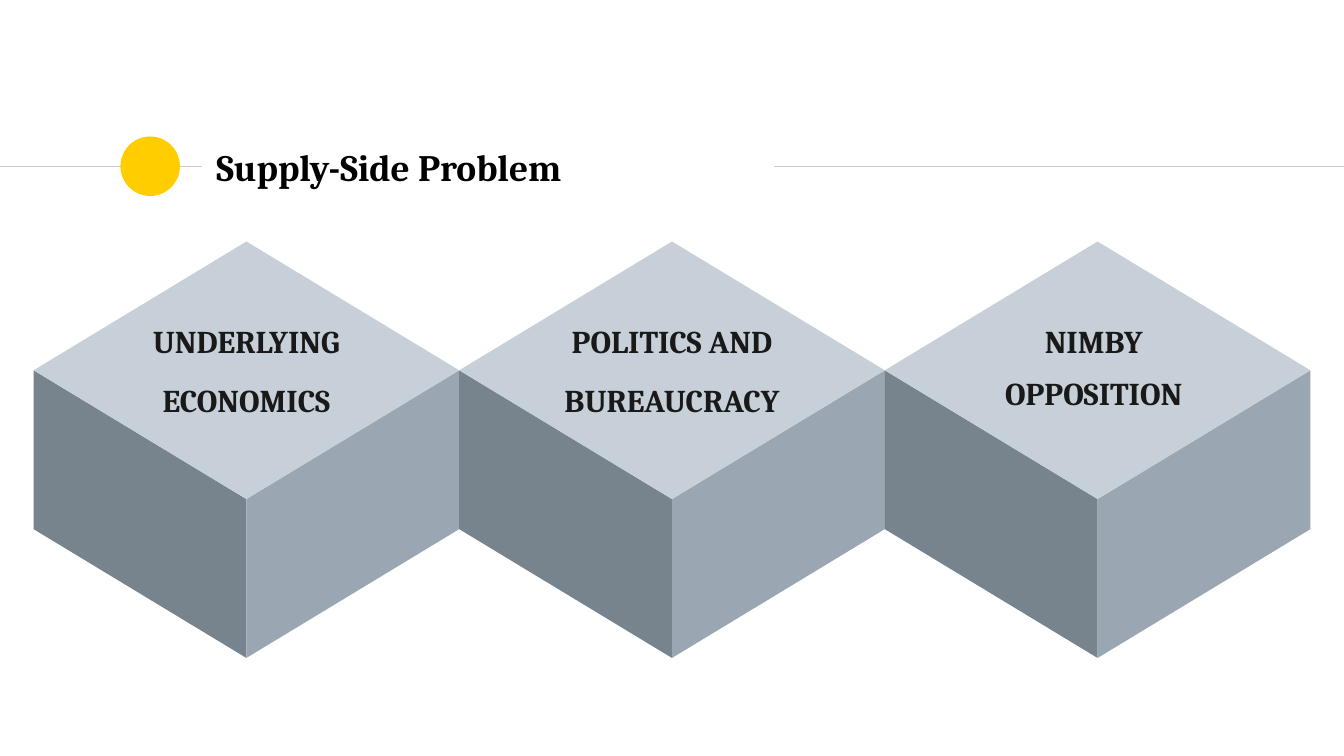
from lxml.etree import SubElement
from pptx import Presentation
from pptx.dml.color import RGBColor
from pptx.enum.shapes import MSO_CONNECTOR, MSO_SHAPE
from pptx.enum.text import MSO_ANCHOR, MSO_AUTO_SIZE, PP_ALIGN
from pptx.oxml.ns import qn
from pptx.util import Pt

PX = 9525  # EMU in one px
FONT = "Cambria"
COLORS = {
    "rule": "CCCCCC",
    "dot": "FFCD00",
    "left": "77838D",
    "right": "9AA7B2",
    "top": "C7D0D8",
    "label": "191919",
    "title": "000000",
}

CUBE_WIDTH, CUBE_HEIGHT, FACE_HEIGHT = 608, 595, 368
# Lines of text, line spacing, label size, shift from the cube's centre
CUBES = [
    (["UNDERLYING", "ECONOMICS"], 1.56, (428, 140), 0),
    (["POLITICS AND", "BUREAUCRACY"], 1.56, (428, 140), 0),
    (["NIMBY", "OPPOSITION"], 1.36, (417, 130), -6),
]


def color(name):
    return RGBColor.from_string(COLORS[name])


def paint(shape, name):
    shape.fill.solid()
    shape.fill.fore_color.rgb = color(name)
    shape.line.fill.background()
    shape.shadow.inherit = False


def set_frame(frame, inset):
    frame.word_wrap = True
    frame.auto_size = MSO_AUTO_SIZE.NONE
    frame.vertical_anchor = MSO_ANCHOR.MIDDLE
    frame.margin_left = frame.margin_right = inset * PX
    frame.margin_top = frame.margin_bottom = inset * PX


def add_span(para, text, size, name):
    span = para.add_run()
    span.text = text
    span.font.name = FONT
    span.font.size = Pt(size)
    span.font.bold = True
    span.font.color.rgb = color(name)


def add_rule(page, start, end, y):
    rule = page.shapes.add_connector(
        MSO_CONNECTOR.STRAIGHT, start * PX, y * PX, end * PX, y * PX)
    rule.line.color.rgb = color("rule")
    rule.line.width = Pt(0.75)
    SubElement(rule.element.spPr, qn("a:effectLst"))


def add_header(page, left, top, width, height):
    # Rules on both sides of the title, with a dot on the left one
    middle = top + height // 2
    add_rule(page, left, left + 289, middle)
    dot = page.shapes.add_shape(
        MSO_SHAPE.OVAL, (left + 172) * PX, (middle - 43) * PX, 85 * PX, 85 * PX)
    paint(dot, "dot")
    add_rule(page, left + 1106, left + width, middle)

    # Title
    title = page.shapes.title
    title.left, title.top = (left + 290) * PX, top * PX
    title.width, title.height = 814 * PX, height * PX
    set_frame(title.text_frame, 19)
    para = title.text_frame.paragraphs[0]
    para.alignment = PP_ALIGN.LEFT
    add_span(para, "Supply-Side Problem", 40, "title")


def add_cube(page, left, top, width, height, face_height):
    center, right = left + width // 2, left + width
    corner, front = top + face_height // 2, top + face_height
    depth = height - face_height
    faces = {
        "left": [(left, corner), (center, front),
                 (center, front + depth), (left, corner + depth)],
        "right": [(right, corner), (center, front),
                  (center, front + depth), (right, corner + depth)],
        "top": [(left, corner), (center, top), (right, corner), (center, front)],
    }
    cube = page.shapes.add_group_shape()
    for name, points in faces.items():
        outline = cube.shapes.build_freeform(*points[0], scale=PX)
        outline.add_line_segments(points[1:], close=True)
        paint(outline.convert_to_shape(), name)


def add_label(page, center, middle, size, lines, spacing):
    width, height = size
    box = page.shapes.add_textbox(
        (center - width // 2) * PX, (middle - height // 2) * PX,
        width * PX, height * PX)
    frame = box.text_frame
    set_frame(frame, 0)
    for index, line in enumerate(lines):
        para = frame.add_paragraph() if index else frame.paragraphs[0]
        para.alignment = PP_ALIGN.CENTER
        para.line_spacing = spacing
        add_span(para, line, 34, "label")


def add_cube_row(page, left, top):
    for index, (lines, spacing, size, shift) in enumerate(CUBES):
        cube_left = left + index * CUBE_WIDTH
        add_cube(page, cube_left, top, CUBE_WIDTH, CUBE_HEIGHT, FACE_HEIGHT)
        add_label(page, cube_left + CUBE_WIDTH // 2 + shift, top + 169,
                  size, lines, spacing)


def main():
    deck = Presentation()
    deck.slide_width, deck.slide_height = 1920 * PX, 1080 * PX
    page = deck.slides.add_slide(deck.slide_layouts[5])
    add_header(page, 0, 188, 1920, 100)
    add_cube_row(page, 48, 345)
    deck.save("out.pptx")


if __name__ == "__main__":
    main()
